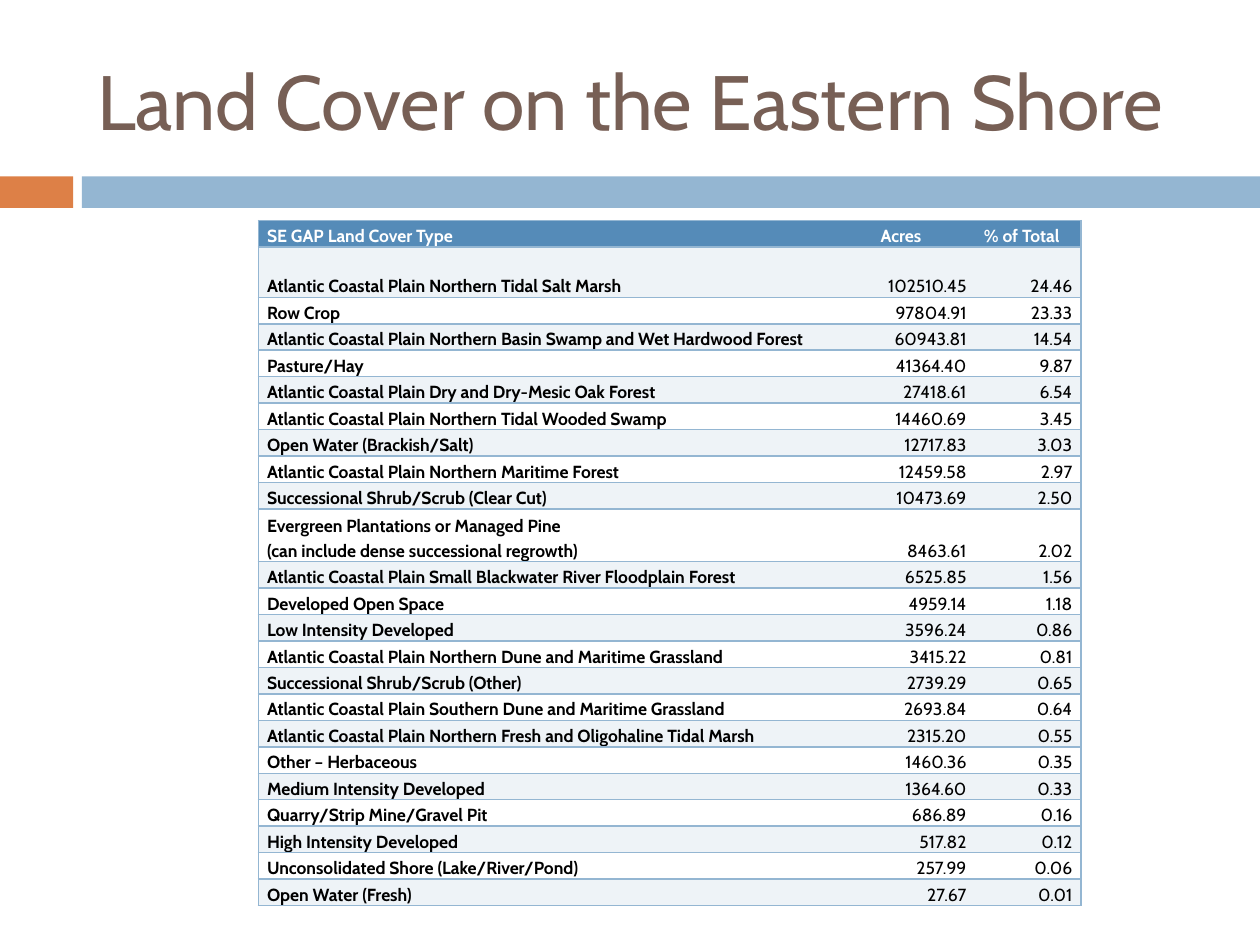
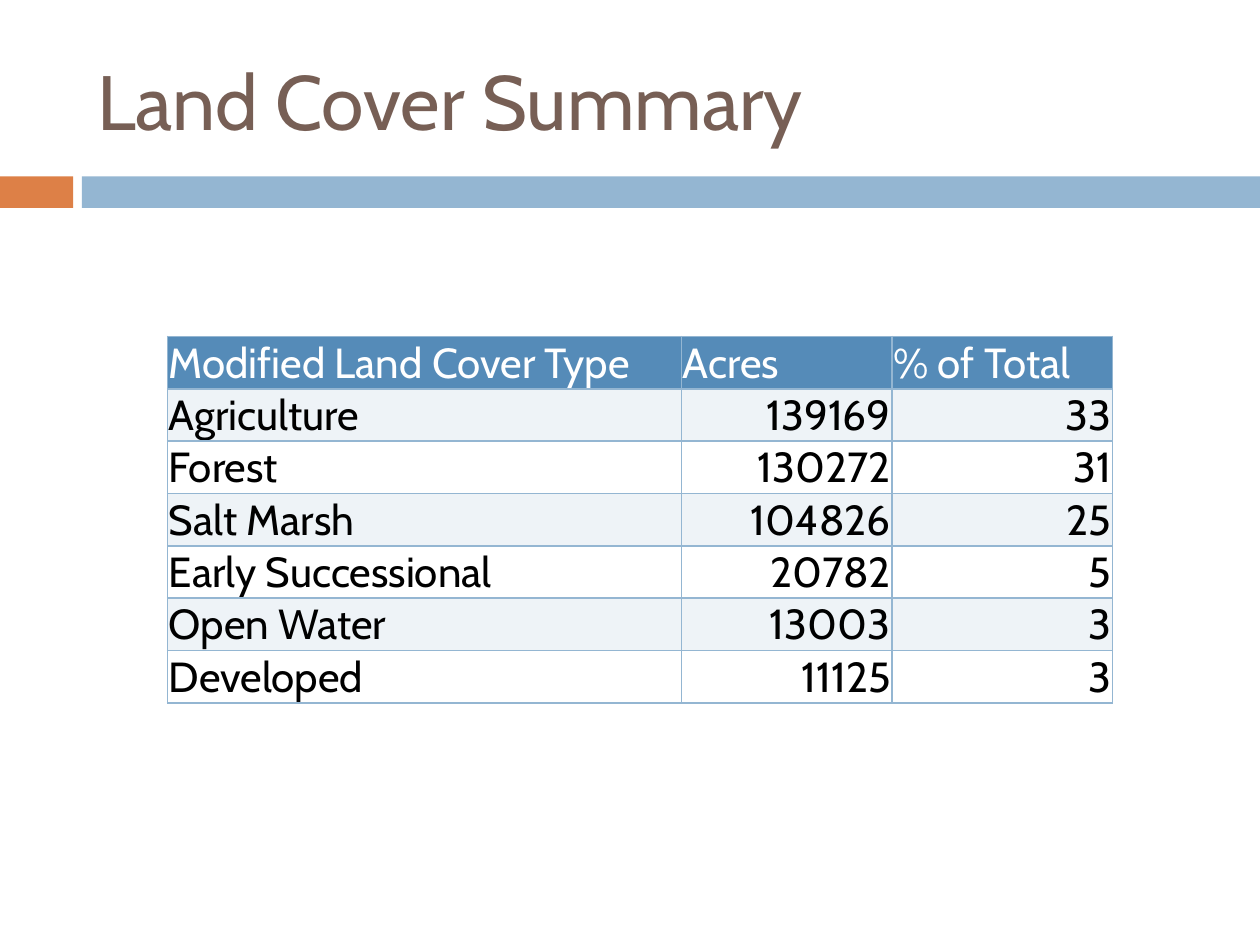
import pptx
import pptx.util
import pptx.dml.color
import pptx.enum.shapes
import pptx.enum.text
import pptx.oxml
import pptx.oxml.ns

Inches = pptx.util.Inches
Pt = pptx.util.Pt
RGBColor = pptx.dml.color.RGBColor
MSO_ANCHOR = pptx.enum.text.MSO_ANCHOR
PP_ALIGN = pptx.enum.text.PP_ALIGN

FONT = "Cabin"
BROWN = RGBColor(0x77, 0x5F, 0x55)
ORANGE = RGBColor(0xDD, 0x80, 0x47)
LIGHT_BLUE = RGBColor(0x94, 0xB6, 0xD2)
HEADER_BLUE = RGBColor(0x55, 0x8B, 0xB8)
STRIPE = RGBColor(0xEE, 0xF3, 0xF7)
WHITE = RGBColor(0xFF, 0xFF, 0xFF)
BLACK = RGBColor(0x00, 0x00, 0x00)

LAND_COVER = [
    ("SE GAP Land Cover Type", "Acres", "% of Total"),
    ("Atlantic Coastal Plain Northern Tidal Salt Marsh", "102510.45", "24.46"),
    ("Row Crop", "97804.91", "23.33"),
    ("Atlantic Coastal Plain Northern Basin Swamp and Wet Hardwood Forest", "60943.81", "14.54"),
    ("Pasture/Hay", "41364.40", "9.87"),
    ("Atlantic Coastal Plain Dry and Dry-Mesic Oak Forest", "27418.61", "6.54"),
    ("Atlantic Coastal Plain Northern Tidal Wooded Swamp", "14460.69", "3.45"),
    ("Open Water (Brackish/Salt)", "12717.83", "3.03"),
    ("Atlantic Coastal Plain Northern Maritime Forest", "12459.58", "2.97"),
    ("Successional Shrub/Scrub (Clear Cut)", "10473.69", "2.50"),
    ("Evergreen Plantations or Managed Pine\n(can include dense successional regrowth)",
     "8463.61", "2.02"),
    ("Atlantic Coastal Plain Small Blackwater River Floodplain Forest", "6525.85", "1.56"),
    ("Developed Open Space", "4959.14", "1.18"),
    ("Low Intensity Developed", "3596.24", "0.86"),
    ("Atlantic Coastal Plain Northern Dune and Maritime Grassland", "3415.22", "0.81"),
    ("Successional Shrub/Scrub (Other)", "2739.29", "0.65"),
    ("Atlantic Coastal Plain Southern Dune and Maritime Grassland", "2693.84", "0.64"),
    ("Atlantic Coastal Plain Northern Fresh and Oligohaline Tidal Marsh", "2315.20", "0.55"),
    ("Other – Herbaceous", "1460.36", "0.35"),
    ("Medium Intensity Developed", "1364.60", "0.33"),
    ("Quarry/Strip Mine/Gravel Pit", "686.89", "0.16"),
    ("High Intensity Developed", "517.82", "0.12"),
    ("Unconsolidated Shore (Lake/River/Pond)", "257.99", "0.06"),
    ("Open Water (Fresh)", "27.67", "0.01"),
]

SUMMARY = [
    ("Modified Land Cover Type", "Acres", "% of Total"),
    ("Agriculture", "139169", "33"),
    ("Forest", "130272", "31"),
    ("Salt Marsh", "104826", "25"),
    ("Early Successional", "20782", "5"),
    ("Open Water", "13003", "3"),
    ("Developed", "11125", "3"),
]


def format_run(r, size, color, bold=False):
    r.font.name = FONT
    r.font.size = Pt(size)
    r.font.color.rgb = color
    r.font.bold = bold


def add_band(slide, left, width, color):
    sp = slide.shapes.add_shape(pptx.enum.shapes.MSO_SHAPE.RECTANGLE,
                                Inches(left), Inches(1.4), Inches(width), Inches(0.25))
    sp.shadow.inherit = False
    sp.fill.solid()
    sp.fill.fore_color.rgb = color
    sp.line.fill.background()


def add_titled_slide(prs, title):
    """Add a slide with the two bands and a left-aligned title."""
    slide = prs.slides.add_slide(prs.slide_layouts[5])
    add_band(slide, 0, 0.58, ORANGE)
    add_band(slide, 0.65, 9.35, LIGHT_BLUE)
    sp = slide.shapes.title
    sp.left, sp.top, sp.width, sp.height = map(Inches, (0.67, 0.25, 8.92, 1.08))
    tf = sp.text_frame
    tf.text = title
    tf.auto_size = pptx.enum.text.MSO_AUTO_SIZE.NONE
    tf.vertical_anchor = MSO_ANCHOR.MIDDLE
    p = tf.paragraphs[0]
    p.alignment = PP_ALIGN.LEFT
    format_run(p.runs[0], 44, BROWN)
    return slide


def set_borders(cell, visible):
    """Draw the sides named in visible (of L, R, T, B) and clear the others."""
    tcPr = cell._tc.get_or_add_tcPr()
    for i, side in enumerate("LRTB"):
        paint = (f'<a:solidFill><a:srgbClr val="{LIGHT_BLUE}"/></a:solidFill>'
                 if side in visible else "<a:noFill/>")
        tcPr.insert(i, pptx.oxml.parse_xml(
            f'<a:ln{side} {pptx.oxml.ns.nsdecls("a")} w="12700">{paint}</a:ln{side}>'))


def fill_cell(cell, text, size, color, bold, alignment, spacing, margins):
    cell.margin_left = cell.margin_right = Inches(margins[0])
    cell.margin_top, cell.margin_bottom = Inches(margins[1]), 0
    cell.vertical_anchor = MSO_ANCHOR.BOTTOM
    cell.text_frame.text = text
    for p in cell.text_frame.paragraphs:
        p.alignment = alignment
        p.line_spacing = spacing
        format_run(p.runs[0], size, color, bold)


def add_land_table(slide, rows, left, top, widths, heights, size, margins,
                   spacing=1.0, bold_labels=False, inner_verticals=True):
    frame = slide.shapes.add_table(len(rows), len(widths), Inches(left), Inches(top),
                                   Inches(sum(widths)), Inches(sum(heights)))
    table = frame.table
    table.horz_banding = False
    for column, width in zip(table.columns, widths):
        column.width = Inches(width)
    for i, (values, height) in enumerate(zip(rows, heights)):
        table.rows[i].height = Inches(height)
        header = i == 0
        background = HEADER_BLUE if header else STRIPE if i % 2 else WHITE
        for j, text in enumerate(values):
            cell = table.cell(i, j)
            fill_cell(cell, text, size, WHITE if header else BLACK,
                      bold_labels and (header or j == 0),
                      PP_ALIGN.LEFT if header or j == 0 else PP_ALIGN.RIGHT,
                      spacing, margins)
            cell.fill.solid()
            cell.fill.fore_color.rgb = background
            sides = "TB"
            if inner_verticals or j == 0:
                sides += "L"
            if inner_verticals or j == len(widths) - 1:
                sides += "R"
            set_borders(cell, sides)


def main():
    prs = pptx.Presentation()
    prs.slide_width, prs.slide_height = Inches(10), Inches(7.5)

    slide = add_titled_slide(prs, "Land Cover on the Eastern Shore")
    heights = [0.42 if "\n" in row[0] else 0.21 for row in LAND_COVER]
    heights[1] = 0.4
    add_land_table(slide, LAND_COVER, 2.05, 1.75, (4.87, 0.82, 0.84), heights,
                   size=10, margins=(0.07, 0), spacing=1.15,
                   bold_labels=True, inner_verticals=False)

    slide = add_titled_slide(prs, "Land Cover Summary")
    add_land_table(slide, SUMMARY, 1.33, 2.67, (4.08, 1.67, 1.75),
                   [0.41] * len(SUMMARY), size=24, margins=(0.01, 0.01))

    prs.save("out.pptx")


if __name__ == "__main__":
    main()
